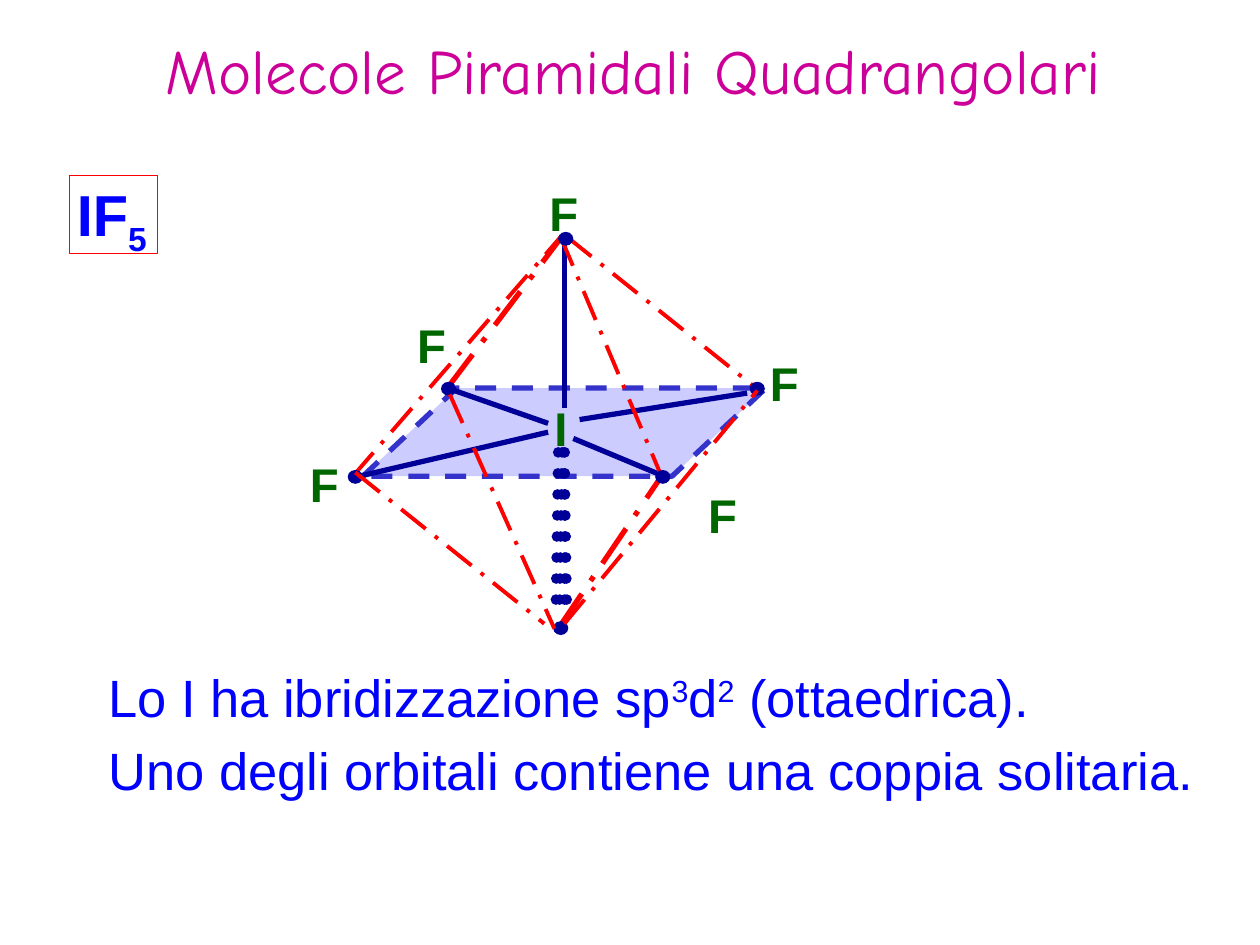
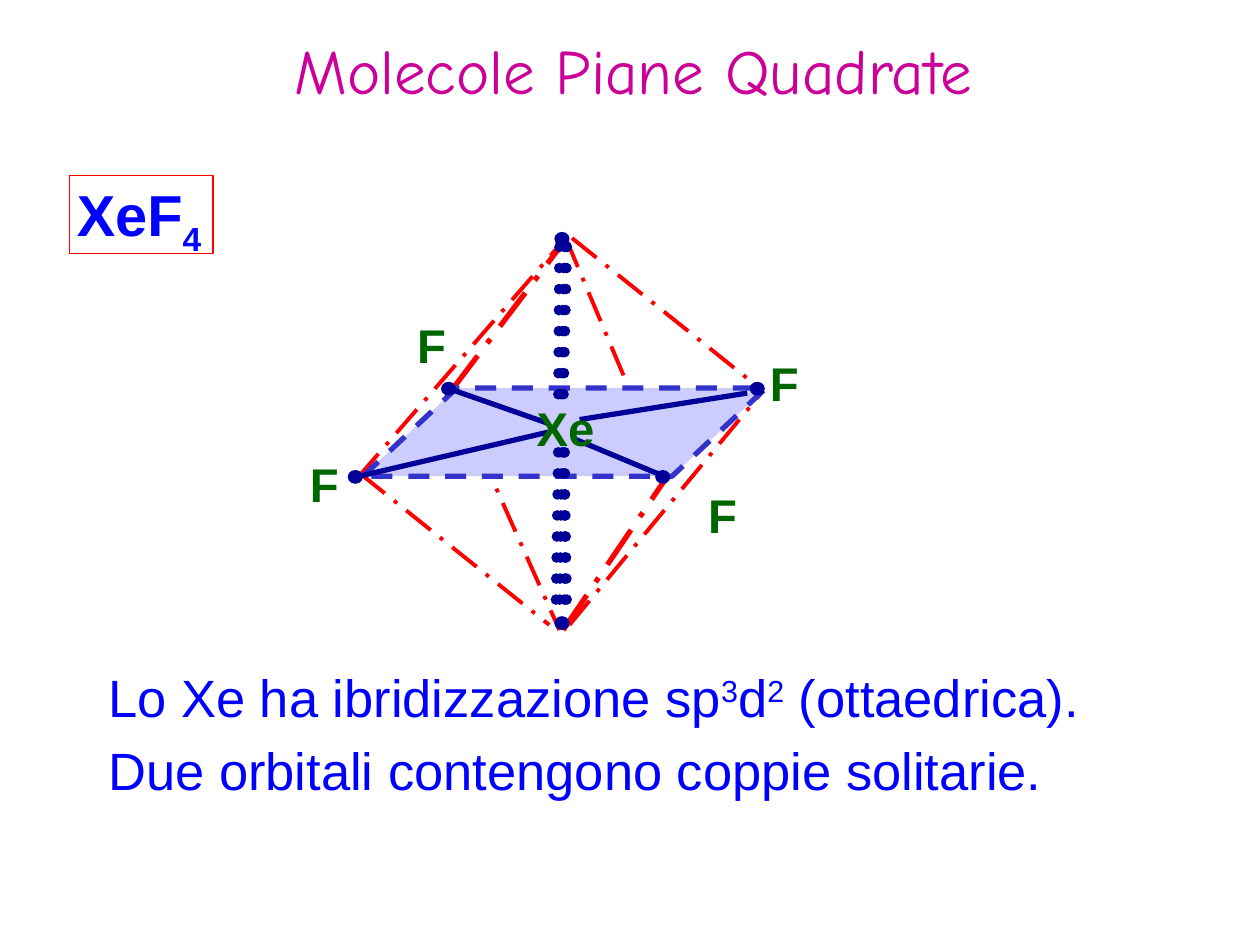
from lxml import etree
from pptx import Presentation
from pptx import util as u
from pptx.dml.color import RGBColor
from pptx.enum import dml, shapes, text
from pptx.oxml import ns

# Grid of 100 columns by 75 rows, one cell is a tenth of an inch
COLS, ROWS = 100, 75
CELL = u.Inches(0.1)
HUES = {"title": "CC0099", "text": "0000FF", "atom": "006600", "bond": "000099",
        "edge": "FF0000", "plane": "CCCCFF", "rim": "3333CC"}
DASH = dml.MSO_LINE

# Octahedron: start, end, line width
EDGES = [
    ((44.3, 49.9), (52.7, 37.5), 3),
    ((45, 18.8), (60, 30.8), 2.25),
    ((35.5, 30.8), (44.5, 18.9), 3),
    ((28, 37.8), (44.5, 18.8), 2.25),
    ((44.5, 18.8), (52.5, 37.8), 2.25),
    ((35.7, 31.3), (44, 49.9), 2.25),
    ((28.2, 37.5), (43.2, 49.5), 2.25),
    ((44.8, 49.5), (60.1, 31), 2.25),
]
BONDS = [
    ((46, 33.3), (59.3, 31.2)),
    ((28.5, 37.8), (43.5, 34.3)),
    ((35.5, 30.8), (43.5, 33.6)),
    ((45.5, 34.8), (52.7, 37.8)),
]
AXIS = ((44.8, 19.4), (44.8, 32.4))
CORNERS = [(60.1, 30.85), (52.6, 37.85), (28.2, 37.85), (35.6, 30.85)]
FLUORS = [(55.6, 38.3), (24, 35.8), (60.5, 27.8), (32.5, 24.8)]

# Lone pairs: first row, then the top and bottom column of each strand
PAIR = 13
LOW = (35.9, [(44.8, 44.8), (44.6, 44.4), (44.8, 45), (44.3, 44.1)])
HIGH = (19.6, [(44.8, 44.5), (44.4, 44.3), (45, 44.7)])

SLIDES = [
    dict(title="Molecole Piramidali Quadrangolari", name=("IF", "5"), wide=7,
         core=("I", 43.4, 2.3), tips=[(44.9, 18.95), (44.5, 49.85)],
         tops=[(43, 14.3)], axes=[AXIS], pairs=[LOW], shift=(0, 0), back=1,
         width=88.2, last="Uno degli orbitali contiene una coppia solitaria."),
    dict(title="Molecole Piane Quadrate", name=("XeF", "4"), wide=11.4,
         core=("Xe", 42, 5.8), tips=[(44.6, 18.95), (44.6, 49.45)],
         tops=[], axes=[], pairs=[LOW, HIGH], shift=(0.4, 0.1), back=len(EDGES),
         width=79.4, last="Due orbitali contengono coppie solitarie."),
]


def grid(*vals):
    return [round(v * CELL) for v in vals]


def hue(key):
    return RGBColor.from_string(HUES[key])


def style(font, size, key, bold=False, face="Arial"):
    font.name, font.size, font.bold = face, u.Pt(size), bold
    font.color.rgb = hue(key)


def place(shape, box):
    shape.left, shape.top, shape.width, shape.height = grid(*box)


def inset(frame):
    frame.margin_left = frame.margin_right = u.Inches(0.06)
    frame.margin_top = frame.margin_bottom = u.Inches(0.03)
    frame.vertical_anchor = text.MSO_ANCHOR.TOP


def write(para, parts):
    """Add runs from (words, baseline shift in percent) pairs."""
    for words, base in parts:
        run = para.add_run()
        run.text = words
        if base:
            run._r.get_or_add_rPr().set("baseline", str(base * 1000))


def stroke(line, key, width, dash=None):
    line.color.rgb, line.width = hue(key), u.Pt(width)
    if dash:
        line.dash_style = dash


def link(slide, start, end, key, width, dash=None):
    line = slide.shapes.add_connector(shapes.MSO_CONNECTOR.STRAIGHT, *grid(*start, *end))
    stroke(line.line, key, width, dash)
    if dash == DASH.ROUND_DOT:
        line.line._get_or_add_ln().set("cap", "rnd")
    etree.SubElement(line._element.spPr, ns.qn("a:effectLst"))


def solid(slide, kind, box, key):
    shape = slide.shapes.add_shape(kind, *grid(*box))
    shape.shadow.inherit = False
    shape.fill.solid()
    shape.fill.fore_color.rgb = hue(key)
    shape.line.fill.background()
    return shape


def dot(slide, x, y):
    solid(slide, shapes.MSO_SHAPE.OVAL, (x - 0.6, y - 0.55, 1.2, 1.1), "bond")


def label(slide, box, parts, size, key):
    shape = slide.shapes.add_textbox(*grid(*box))
    frame = shape.text_frame
    inset(frame)
    frame.word_wrap = False
    frame.auto_size = text.MSO_AUTO_SIZE.SHAPE_TO_FIT_TEXT
    para = frame.paragraphs[0]
    write(para, parts)
    for run in para.runs:
        style(run.font, size, key, True)
    return shape


def head(slide, words):
    shape = slide.shapes.title
    place(shape, (6, 2, 88.5, 10))
    frame = shape.text_frame
    frame.auto_size = text.MSO_AUTO_SIZE.NONE
    frame.vertical_anchor = text.MSO_ANCHOR.TOP
    frame.text = words
    para = frame.paragraphs[0]
    para.alignment = text.PP_ALIGN.CENTER
    style(para.font, 36, "title", face="Comic Neue")


def notes(slide, lines, width):
    shape = slide.placeholders[1]
    place(shape, (8, 52, width, 11.6))
    frame = shape.text_frame
    inset(frame)
    frame.auto_size = text.MSO_AUTO_SIZE.NONE
    for i, parts in enumerate(lines):
        para = frame.add_paragraph() if i else frame.paragraphs[0]
        write(para, parts)
        para.line_spacing, para.space_before = 1.1, u.Pt(2)
        style(para.font, 30, "text")
        props = para._p.get_or_add_pPr()
        props.set("marL", "0")
        props.set("indent", "0")
        mark = etree.Element(ns.qn("a:buNone"))
        props.insert_element_before(mark, "a:tabLst", "a:defRPr", "a:extLst")


def edges(slide, items, shift):
    for start, end, width in items:
        ends = [[p + s for p, s in zip(point, shift)] for point in (start, end)]
        link(slide, *ends, "edge", width, DASH.LONG_DASH_DOT)


def solve(slide, data):
    """Draw the molecule from back to front."""
    back, shift = data["back"], data["shift"]
    edges(slide, EDGES[:back], shift)

    # Equatorial plane and bonds
    plane = solid(slide, shapes.MSO_SHAPE.PARALLELOGRAM, (28.8, 30.8, 32, 7), "plane")
    plane.adjustments[0] = 1.065
    stroke(plane.line, "rim", 3, DASH.DASH)
    for start, end in BONDS + data["axes"]:
        link(slide, start, end, "bond", 3)
    edges(slide, EDGES[back:5], shift)

    # Atoms and lone pairs
    for x, y in CORNERS + data["tips"]:
        dot(slide, x, y)
    for x, y in FLUORS + data["tops"]:
        label(slide, (x, y, 3.5, 5.1), [("F", 0)], 27, "atom")
    core, left, wide = data["core"]
    label(slide, (left, 31.4, wide, 5.1), [(core, 0)], 27, "atom")
    for row, strands in data["pairs"]:
        for top, low in strands:
            link(slide, (top, row), (low, row + PAIR), "bond", 6, DASH.ROUND_DOT)
    edges(slide, EDGES[max(back, 5):], shift)


def build(deck, data):
    slide = deck.slides.add_slide(deck.slide_layouts[1])
    head(slide, data["title"])
    solve(slide, data)
    stem, count = data["name"]
    badge = label(slide, (5.5, 13.9, data["wide"], 6.2), [(stem, 0), (count, -25)], 33, "text")
    stroke(badge.line, "edge", 0.75)
    hybrid = [(f"Lo {data['core'][0]} ha ibridizzazione sp", 0), ("3", 30), ("d", 0),
              ("2", 30), (" (ottaedrica).", 0)]
    notes(slide, [hybrid, [(data["last"], 0)]], data["width"])


def main():
    deck = Presentation()
    deck.slide_width, deck.slide_height = grid(COLS, ROWS)
    for data in SLIDES:
        build(deck, data)
    deck.save("out.pptx")


if __name__ == "__main__":
    main()
